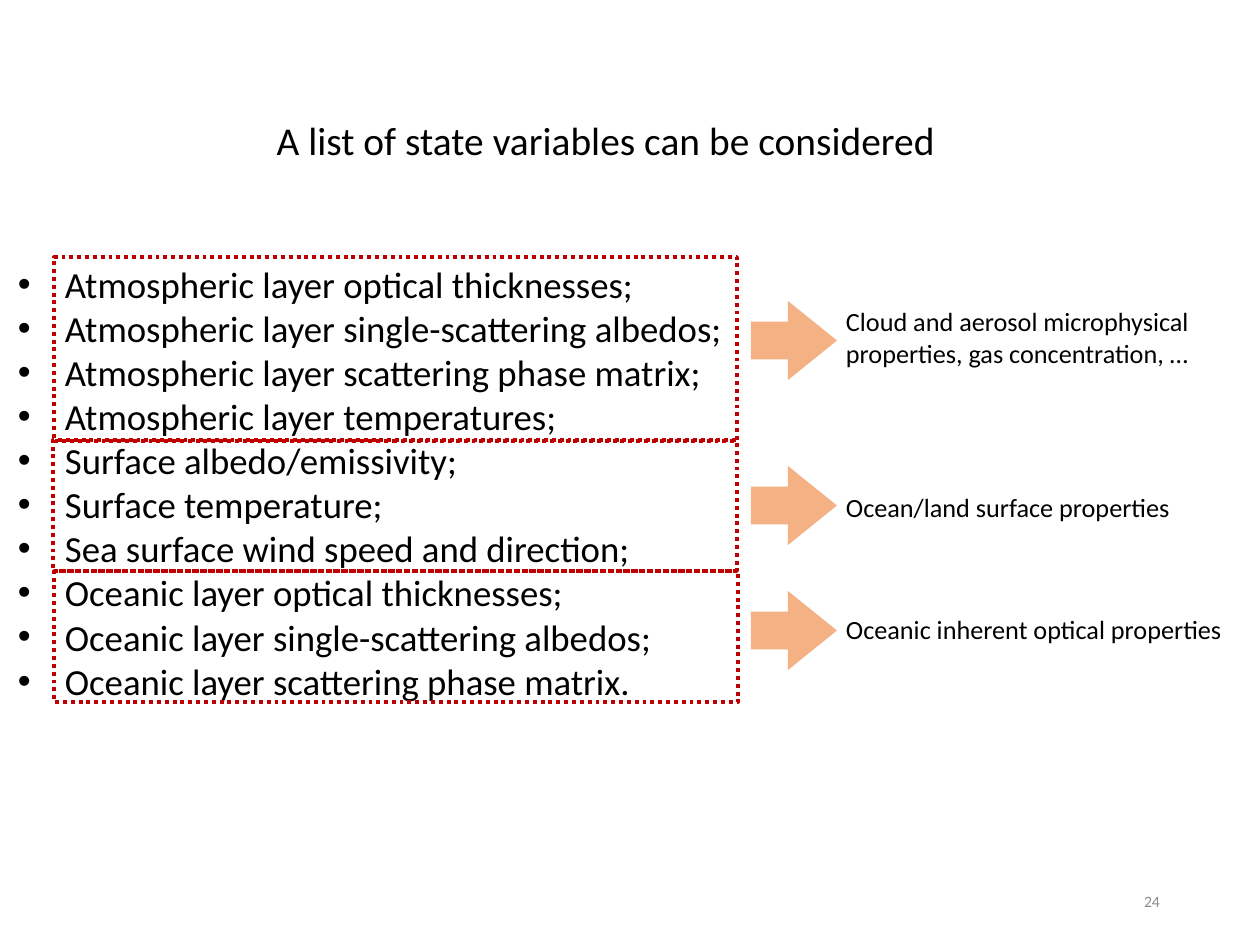
from lxml.etree import SubElement
from pptx import Presentation
from pptx.dml.color import RGBColor
from pptx.enum.dml import MSO_LINE
from pptx.enum.shapes import MSO_SHAPE
from pptx.enum.text import MSO_ANCHOR, MSO_AUTO_SIZE, PP_ALIGN
from pptx.oxml.ns import qn
from pptx.util import Emu, Pt

PX_PER_INCH = 126
EMU_PER_PX = 914400 / PX_PER_INCH
FONT = "Calibri"
COLORS = {
    "text": "000000",
    "number": "8C8C8C",
    "arrow": "F4B183",
    "frame": "C00000",
}
ARROW_LEFT, ARROW_WIDTH, ARROW_HEIGHT = 751, 86, 79
LABEL_LEFT, LABEL_WIDTH, LABEL_HEIGHT = 837, 415, 96

# Variables, frame (left, top, width, height), arrow top, label top, label
GROUPS = [
    (["Atmospheric layer optical thicknesses;",
      "Atmospheric layer single-scattering albedos;",
      "Atmospheric layer scattering phase matrix;",
      "Atmospheric layer temperatures;"],
     (54, 257, 683, 184), 301, 289,
     "Cloud and aerosol microphysical properties, gas concentration, …"),
    (["Surface albedo/emissivity;",
      "Surface temperature;",
      "Sea surface wind speed and direction;"],
     (53, 440, 684, 131), 466, 459,
     "Ocean/land surface properties"),
    (["Oceanic layer optical thicknesses;",
      "Oceanic layer single-scattering albedos;",
      "Oceanic layer scattering phase matrix."],
     (54, 571, 684, 131), 591, 581,
     "Oceanic inherent optical properties"),
]


def px(length):
    return Emu(round(length * EMU_PER_PX))


def color(name):
    return RGBColor.from_string(COLORS[name])


def place(shape, left, top, width, height):
    shape.left, shape.top = px(left), px(top)
    shape.width, shape.height = px(width), px(height)


def add_bullet(paragraph, indent):
    properties = paragraph._p.get_or_add_pPr()
    properties.set("marL", str(px(indent)))
    properties.set("indent", str(-px(indent)))
    SubElement(properties, qn("a:buFont"), typeface="Arial")
    SubElement(properties, qn("a:buChar"), char="•")


def write_text(shape, *lines, size, color_name="text", align=PP_ALIGN.LEFT,
               margins=(9, 5), bullet_indent=None):
    """Fill a shape with one paragraph per line; margins are (side, top and bottom)."""
    frame = shape.text_frame
    frame.auto_size = MSO_AUTO_SIZE.NONE
    frame.word_wrap = True
    frame.vertical_anchor = MSO_ANCHOR.MIDDLE
    frame.margin_left = frame.margin_right = px(margins[0])
    frame.margin_top = frame.margin_bottom = px(margins[1])
    for index, line in enumerate(lines):
        paragraph = frame.add_paragraph() if index else frame.paragraphs[0]
        paragraph.alignment = align
        paragraph.space_before = Pt(0)
        if bullet_indent:
            add_bullet(paragraph, bullet_indent)
        run = paragraph.add_run()
        run.text = line
        run.font.name = FONT
        run.font.size = Pt(size)
        run.font.color.rgb = color(color_name)


def add_text(slide, box, text, **text_format):
    shape = slide.shapes.add_textbox(*map(px, box))
    write_text(shape, text, **text_format)


def add_frame(slide, box):
    shape = slide.shapes.add_shape(MSO_SHAPE.RECTANGLE, *map(px, box))
    shape.shadow.inherit = False
    shape.fill.background()
    shape.line.color.rgb = color("frame")
    shape.line.width = Pt(2.25)
    shape.line.dash_style = MSO_LINE.ROUND_DOT


def add_arrow(slide, top):
    box = (ARROW_LEFT, top, ARROW_WIDTH, ARROW_HEIGHT)
    shape = slide.shapes.add_shape(MSO_SHAPE.RIGHT_ARROW, *map(px, box))
    shape.adjustments[0] = 0.48
    shape.adjustments[1] = 0.62
    shape.shadow.inherit = False
    shape.fill.solid()
    shape.fill.fore_color.rgb = color("arrow")
    shape.line.fill.background()


def main():
    presentation = Presentation()
    presentation.slide_width, presentation.slide_height = px(1260), px(945)
    slide = presentation.slides.add_slide(presentation.slide_layouts[1])

    title, body = slide.placeholders
    place(title, 189, 121, 843, 38)
    write_text(title, "A list of state variables can be considered ",
               size=22.5, align=PP_ALIGN.CENTER)

    variables = [name for group in GROUPS for name in group[0]]
    place(body, 9, 213, 771, 538)
    write_text(body, *variables, size=21, bullet_indent=47)

    for _, frame_box, arrow_top, label_top, label in GROUPS:
        add_frame(slide, frame_box)
        add_arrow(slide, arrow_top)
        add_text(slide, (LABEL_LEFT, label_top, LABEL_WIDTH, LABEL_HEIGHT),
                 label, size=15)

    add_text(slide, (890, 876, 283, 50), "24", size=9, color_name="number",
             align=PP_ALIGN.RIGHT, margins=(13, 6))
    presentation.save("out.pptx")


if __name__ == "__main__":
    main()
